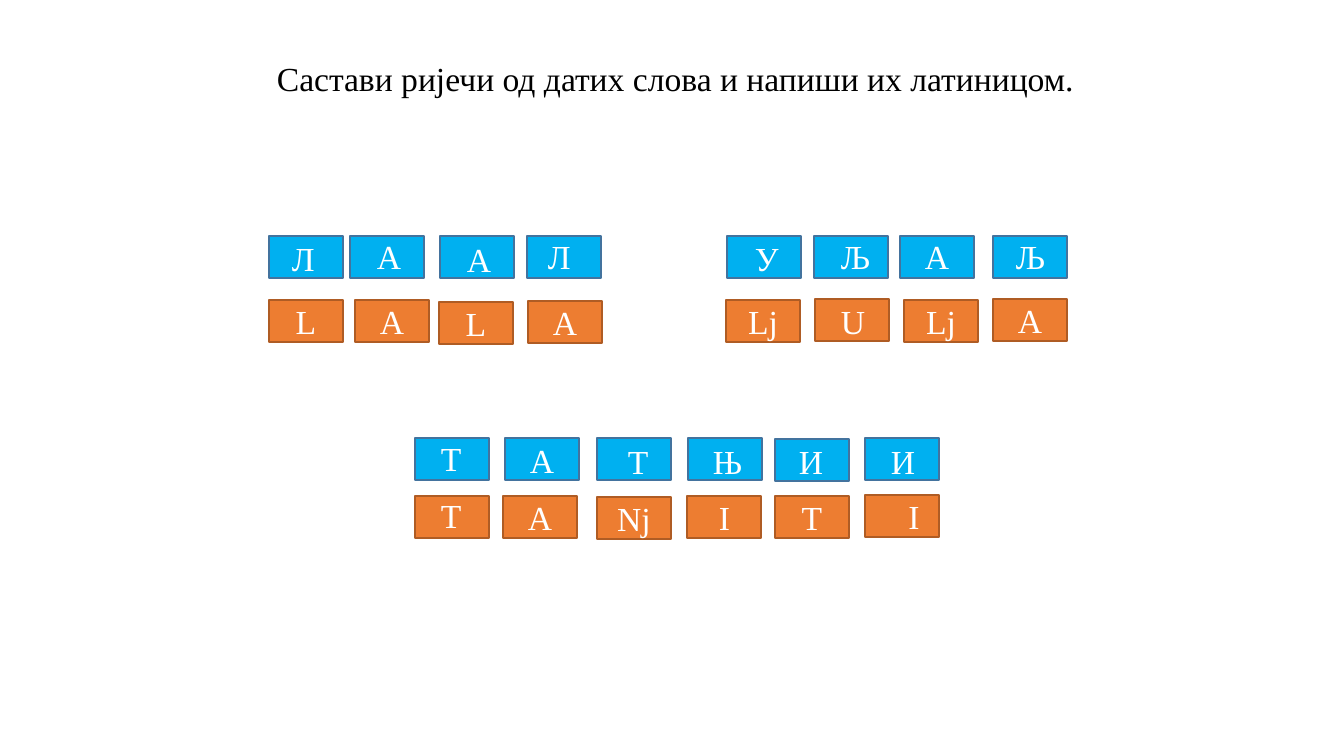
from pptx import Presentation
from pptx.dml.color import RGBColor
from pptx.enum.shapes import MSO_SHAPE
from pptx.enum.text import MSO_ANCHOR, MSO_AUTO_SIZE, PP_ALIGN
from pptx.util import Emu, Pt

COLOURS = {
    "black": "000000", "white": "FFFFFF",
    "blue": "00B0F0", "blue line": "43739E",
    "orange": "ED7D31", "orange line": "AF5C24",
}
TILE_WIDTH, TILE_HEIGHT = 74, 42
LETTER_HEIGHT = 50


def px(length):
    return Emu(round(length * 914400 / 100.8))


def write(frame, text, colour):
    span = frame.paragraphs[0].add_run()
    span.text = text
    span.font.name = "Times New Roman"
    span.font.size = Pt(24)
    span.font.color.rgb = RGBColor.from_string(COLOURS[colour])


deck = Presentation()
deck.slide_width, deck.slide_height = px(1344), px(756)
page = deck.slides.add_slide(deck.slide_layouts[6])

title = page.shapes.add_textbox(px(267), px(53), px(823), px(LETTER_HEIGHT))
title.text_frame.word_wrap = False
title.text_frame.auto_size = MSO_AUTO_SIZE.SHAPE_TO_FIT_TEXT
write(title.text_frame, "Састави ријечи од датих слова и напиши их латиницом.", "black")

# Tile: letter, left, top, then left, top and width of a separate letter box
tiles = {
    "blue": [
        ("Л", 269, 236, (282, 233, 34)),
        ("А", 350, 236, (367, 231, 34)),
        ("А", 440, 236, (457, 234, 34)),
        ("Л", 527, 236, (538, 231, 34)),
        ("У", 727, 236, (745, 233, 34)),
        ("Љ", 814, 236, (831, 231, 43)),
        ("А", 900, 236, (915, 231, 34)),
        ("Љ", 993, 236, (1006, 231, 34)),
        ("Т", 415, 438, (431, 433, 34)),
        ("А", 505, 438, (520, 435, 34)),
        ("Т", 597, 438, (618, 436, 34)),
        ("Њ", 688, 438, (703, 436, 34)),
        ("И", 775, 439, (789, 436, 34)),
        ("И", 865, 438, (881, 436, 34)),
    ],
    "orange": [
        ("L", 269, 300, None),
        ("A", 355, 300, None),
        ("L", 439, 302, None),
        ("A", 528, 301, None),
        ("Lj", 726, 300, None),
        ("U", 815, 299, (831, 296, 23)),
        ("Lj", 904, 300, None),
        ("A", 993, 299, None),
        ("Т", 415, 496, (431, 490, 34)),
        ("А", 503, 496, None),
        ("Nj", 597, 497, None),
        ("I", 687, 496, (709, 492, 50)),
        ("Т", 775, 496, None),
        ("I", 865, 495, None),
    ],
}

for colour, letters in tiles.items():
    for letter, left, top, place in letters:
        tile = page.shapes.add_shape(
            MSO_SHAPE.RECTANGLE, px(left), px(top), px(TILE_WIDTH), px(TILE_HEIGHT))
        tile.shadow.inherit = False
        tile.fill.solid()
        tile.fill.fore_color.rgb = RGBColor.from_string(COLOURS[colour])
        tile.line.color.rgb = RGBColor.from_string(COLOURS[colour + " line"])
        tile.line.width = Pt(1)
        if place:
            box_left, box_top, box_width = place
            box = page.shapes.add_textbox(
                px(box_left), px(box_top), px(box_width), px(LETTER_HEIGHT))
            box.text_frame.word_wrap = True
            box.text_frame.auto_size = MSO_AUTO_SIZE.SHAPE_TO_FIT_TEXT
            write(box.text_frame, letter, "white")
        else:
            frame = tile.text_frame
            frame.vertical_anchor = MSO_ANCHOR.MIDDLE
            frame.paragraphs[0].alignment = PP_ALIGN.CENTER
            if letter == "I":
                frame.margin_left = px(34)
            write(frame, letter, "white")

deck.save("out.pptx")
